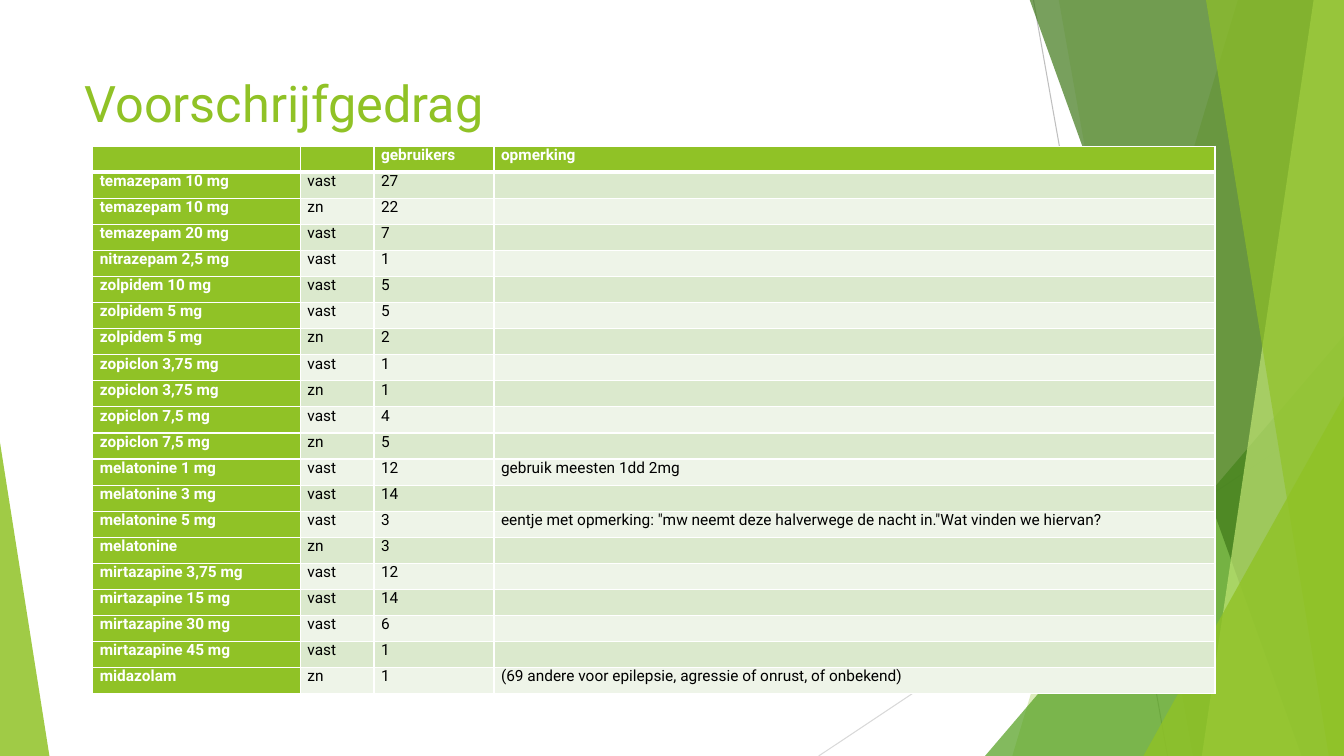
import dataclasses
import typing

import lxml.etree
import pptx
import pptx.dml.color
import pptx.enum.shapes
import pptx.enum.text
import pptx.oxml.ns
import pptx.util

EMU_PER_PX = 9144
SLIDE_WIDTH, SLIDE_HEIGHT = 1333, 750
FONT = "Roboto"
COLORS = {
    "lime": "90C226",
    "green": "54A021",
    "forest": "3F7819",
    "pale_lime": "C0E474",
    "band_dark": "DBE9CD",
    "band_light": "EEF4E8",
    "white": "FFFFFF",
    "black": "000000",
    "gray": "BFBFBF",
    "light_gray": "D9D9D9",
}


@dataclasses.dataclass(frozen=True)
class Line:
    start: tuple[int, int]
    end: tuple[int, int]
    color: str


@dataclasses.dataclass(frozen=True)
class Band:
    top_left: int
    bottom_left: int
    color: str
    opacity: int


@dataclasses.dataclass(frozen=True)
class Triangle:
    left: int
    top: int
    width: int
    apex: float
    color: str
    opacity: int


@dataclasses.dataclass(frozen=True)
class Prescription:
    medicine: str
    schedule: str
    users: str
    remark: str = ""


LINES = [
    Line((1025, 0), (1158, 750), "gray"),
    Line((1333, 403), (812, 750), "light_gray"),
]
DECORATIONS = [
    Band(1228, 1004, "lime", 30),
    Band(1050, 1183, "lime", 20),
    Triangle(977, 333, 356, 1, "green", 72),
    Band(1021, 1291, "forest", 70),
    Band(1303, 1192, "pale_lime", 70),
    Band(1196, 1318, "lime", 65),
    Triangle(1134, 393, 199, 1, "lime", 80),
    Triangle(0, 439, 49, 0, "lime", 85),
]
COLUMN_WIDTHS = [206, 73, 119, 715]
TABLE_LEFT, TABLE_TOP, TABLE_HEIGHT = 92, 145, 544
PRESCRIPTIONS = [
    Prescription("", "", "gebruikers", "opmerking"),
    Prescription("temazepam 10 mg", "vast", "27"),
    Prescription("temazepam 10 mg", "zn", "22"),
    Prescription("temazepam 20 mg", "vast", "7"),
    Prescription("nitrazepam 2,5 mg", "vast", "1"),
    Prescription("zolpidem 10 mg", "vast", "5"),
    Prescription("zolpidem 5 mg", "vast", "5"),
    Prescription("zolpidem 5 mg", "zn", "2"),
    Prescription("zopiclon 3,75 mg", "vast", "1"),
    Prescription("zopiclon 3,75 mg", "zn", "1"),
    Prescription("zopiclon 7,5 mg", "vast", "4"),
    Prescription("zopiclon 7,5 mg", "zn", "5"),
    Prescription("melatonine 1 mg", "vast", "12", "gebruik meesten 1dd 2mg"),
    Prescription("melatonine 3 mg", "vast", "14"),
    Prescription("melatonine 5 mg", "vast", "3",
                 'eentje met opmerking: "mw neemt deze halverwege de nacht in."Wat vinden we hiervan?'),
    Prescription("melatonine", "zn", "3"),
    Prescription("mirtazapine 3,75 mg", "vast", "12"),
    Prescription("mirtazapine 15 mg", "vast", "14"),
    Prescription("mirtazapine 30 mg", "vast", "6"),
    Prescription("mirtazapine 45 mg", "vast", "1"),
    Prescription("midazolam", "zn", "1",
                 "(69 andere voor epilepsie, agressie of onrust, of onbekend)"),
]


def px(length: int) -> pptx.util.Emu:
    return pptx.util.Emu(length * EMU_PER_PX)


def rgb(name: str) -> pptx.dml.color.RGBColor:
    return pptx.dml.color.RGBColor.from_string(COLORS[name])


def add_element(parent: typing.Any, tag: str, **attributes: str) -> typing.Any:
    return lxml.etree.SubElement(parent, pptx.oxml.ns.qn(tag), attributes)


def set_font(paragraph: typing.Any, size: int, color: str, bold: bool = False) -> None:
    paragraph.font.name = FONT
    paragraph.font.size = pptx.util.Pt(size)
    paragraph.font.bold = bold
    paragraph.font.color.rgb = rgb(color)


def add_line(slide: typing.Any, line: Line) -> None:
    connector = slide.shapes.add_connector(
        pptx.enum.shapes.MSO_CONNECTOR.STRAIGHT, *map(px, line.start + line.end))
    connector.line.color.rgb = rgb(line.color)
    connector.line.width = pptx.util.Pt(0.75)
    add_element(connector._element.spPr, "a:effectLst")


def add_decoration(slide: typing.Any, item: Band | Triangle) -> None:
    if isinstance(item, Band):
        builder = slide.shapes.build_freeform(item.top_left, -1, scale=EMU_PER_PX)
        builder.add_line_segments([
            (SLIDE_WIDTH, -1), (SLIDE_WIDTH, SLIDE_HEIGHT), (item.bottom_left, SLIDE_HEIGHT)])
        shape = builder.convert_to_shape()
    else:
        shape = slide.shapes.add_shape(
            pptx.enum.shapes.MSO_SHAPE.ISOSCELES_TRIANGLE,
            px(item.left), px(item.top), px(item.width), px(SLIDE_HEIGHT - item.top))
        shape.adjustments[0] = item.apex
    shape.shadow.inherit = False
    shape.line.fill.background()
    shape.fill.solid()
    shape.fill.fore_color.rgb = rgb(item.color)
    color = shape._element.spPr.find(".//" + pptx.oxml.ns.qn("a:srgbClr"))
    add_element(color, "a:alpha", val=str(item.opacity * 1000))


def add_title(slide: typing.Any, text: str) -> None:
    title = slide.shapes.add_textbox(px(74), px(67), px(940), px(144))
    title.text_frame.word_wrap = True
    title.text_frame.text = text
    set_font(title.text_frame.paragraphs[0], 36, "lime")


def add_borders(cell: typing.Any, bottom_width: int) -> None:
    properties = cell._tc.get_or_add_tcPr()
    widths = {"a:lnL": 1, "a:lnR": 1, "a:lnT": 1, "a:lnB": bottom_width}
    for index, (tag, width) in enumerate(widths.items()):
        border = add_element(properties, tag, w=str(pptx.util.Pt(width)))
        fill = add_element(border, "a:solidFill")
        add_element(fill, "a:srgbClr", val=COLORS["white"])
        properties.insert(index, border)


def fill_cell(cell: typing.Any, text: str, row: int, column: int) -> None:
    heading = row == 0 or column == 0
    cell.fill.solid()
    band = "band_dark" if row % 2 else "band_light"
    cell.fill.fore_color.rgb = rgb("lime" if heading else band)
    cell.margin_left = cell.margin_right = px(7)
    cell.margin_top = cell.margin_bottom = 0
    cell.vertical_anchor = pptx.enum.text.MSO_ANCHOR.TOP
    cell.text = text
    paragraph = cell.text_frame.paragraphs[0]
    set_font(paragraph, 11, "white" if heading else "black", heading)
    if not text:
        add_element(paragraph._p, "a:endParaRPr", sz="1100")
    add_borders(cell, 3 if row == 0 else 1)


def add_prescription_table(slide: typing.Any) -> None:
    table = slide.shapes.add_table(
        len(PRESCRIPTIONS), len(COLUMN_WIDTHS), px(TABLE_LEFT), px(TABLE_TOP),
        px(sum(COLUMN_WIDTHS)), px(TABLE_HEIGHT)).table
    for column, width in zip(table.columns, COLUMN_WIDTHS):
        column.width = px(width)
    for row, prescription in enumerate(PRESCRIPTIONS):
        for column, text in enumerate(dataclasses.astuple(prescription)):
            fill_cell(table.cell(row, column), text, row, column)


def main() -> None:
    presentation = pptx.Presentation()
    presentation.slide_width = px(SLIDE_WIDTH)
    presentation.slide_height = px(SLIDE_HEIGHT)
    slide = presentation.slides.add_slide(presentation.slide_layouts[6])
    for line in LINES:
        add_line(slide, line)
    for item in DECORATIONS:
        add_decoration(slide, item)
    add_title(slide, "Voorschrijfgedrag")
    add_prescription_table(slide)
    presentation.save("out.pptx")


if __name__ == "__main__":
    main()
